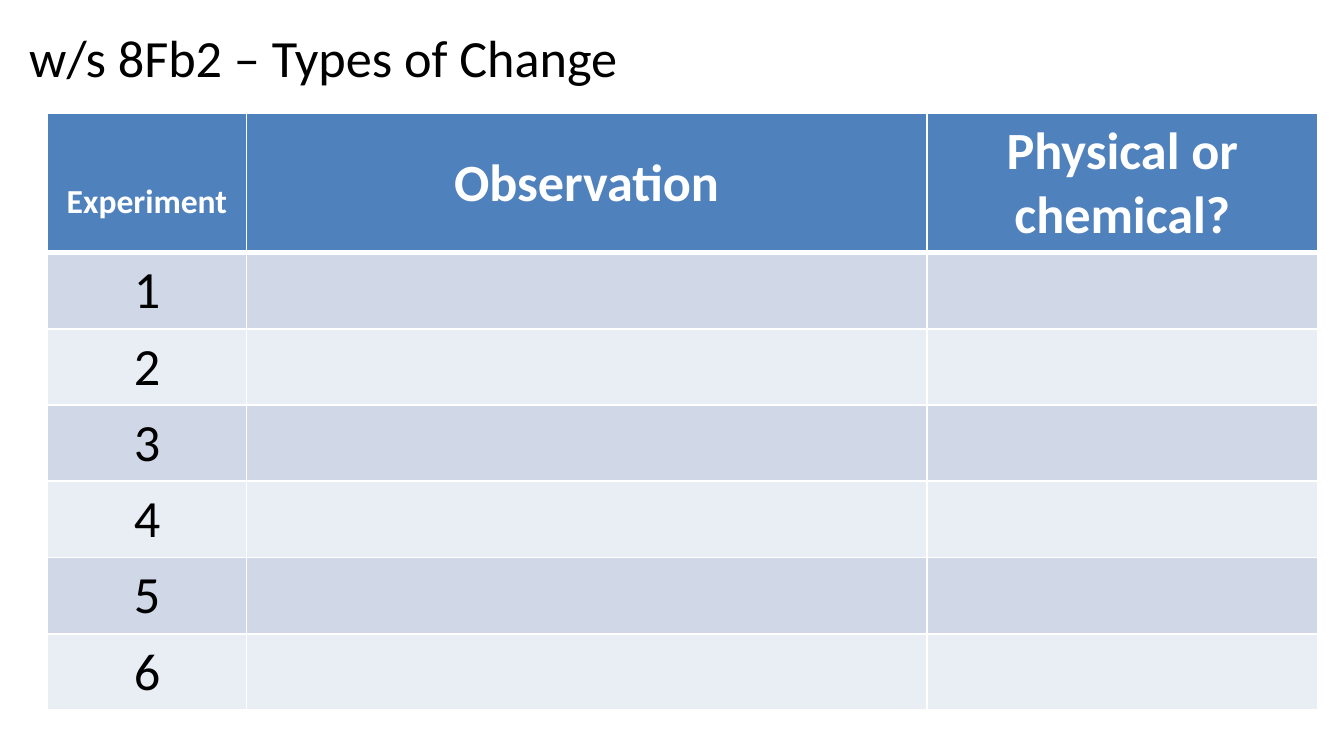
from lxml import etree
from pptx import Presentation
from pptx.dml.color import RGBColor
from pptx.enum.text import MSO_AUTO_SIZE, PP_ALIGN
from pptx.oxml.ns import qn
from pptx.util import Pt

CENTER = PP_ALIGN.CENTER
GROW = MSO_AUTO_SIZE.SHAPE_TO_FIT_TEXT
BLUE, WHITE, BLACK = "4F81BD", "FFFFFF", "000000"
BANDS = ["D0D8E8", "E9EDF4"]
COLS = [106.5, 364.5, 209.5]
HEAD_H, ROW_H = 74.2, 40.8
ROWS = 6
# Heading, text size, line spacing
HEADS = [("Experiment", 18, 2.5), ("Observation", 28, 1.5),
         ("Physical or chemical?", 28, 1)]


def color(code):
    return RGBColor.from_string(code)


def write(para, text, ink, **form):
    run = para.add_run()
    run.text = text
    run.font.color.rgb = color(ink)
    for key, val in {"name": "Calibri", "size": Pt(28), **form}.items():
        setattr(run.font, key, val)


def add_title(slide, text):
    box = slide.shapes.add_textbox(Pt(8.6), Pt(10), Pt(698), Pt(41))
    frame = box.text_frame
    frame.word_wrap = True
    frame.auto_size = GROW
    write(frame.paragraphs[0], text, BLACK)


def paint(cell, fill, top=1, base=1):
    """Give a cell white borders and a solid fill."""
    props = cell._tc.get_or_add_tcPr()
    for side, width in {"L": 1, "R": 1, "T": top, "B": base}.items():
        line = etree.SubElement(props, qn(f"a:ln{side}"), w=str(Pt(width)))
        solid = etree.SubElement(line, qn("a:solidFill"))
        etree.SubElement(solid, qn("a:srgbClr"), val=WHITE)
    cell.fill.solid()
    cell.fill.fore_color.rgb = color(fill)


def put(cell, text, ink, space=1, **form):
    para = cell.text_frame.paragraphs[0]
    para.alignment = CENTER
    para.line_spacing = space
    write(para, text, ink, **form)


def add_grid(slide):
    high = HEAD_H + ROWS * ROW_H
    grid = slide.shapes.add_table(ROWS + 1, len(COLS), Pt(25.5), Pt(60.8),
                                  Pt(sum(COLS)), Pt(high)).table
    for col, width in zip(grid.columns, COLS):
        col.width = Pt(width)
    for num, row in enumerate(grid.rows):
        row.height = Pt(ROW_H if num else HEAD_H)

    # Header row
    for col, (text, size, space) in enumerate(HEADS):
        cell = grid.cell(0, col)
        paint(cell, BLUE, base=3)
        put(cell, text, WHITE, space, size=Pt(size), bold=True)

    # Numbered rows in alternating bands
    for num in range(1, ROWS + 1):
        for col in range(len(COLS)):
            paint(grid.cell(num, col), BANDS[(num - 1) % 2],
                  top=3 if num == 1 else 1)
        put(grid.cell(num, 0), str(num), BLACK, bold=False)


def main():
    deck = Presentation()
    deck.slide_width, deck.slide_height = Pt(720), Pt(405)
    slide = deck.slides.add_slide(deck.slide_layouts[6])
    add_title(slide, "w/s 8Fb2 – Types of Change")
    add_grid(slide)
    deck.save("out.pptx")


if __name__ == "__main__":
    main()
